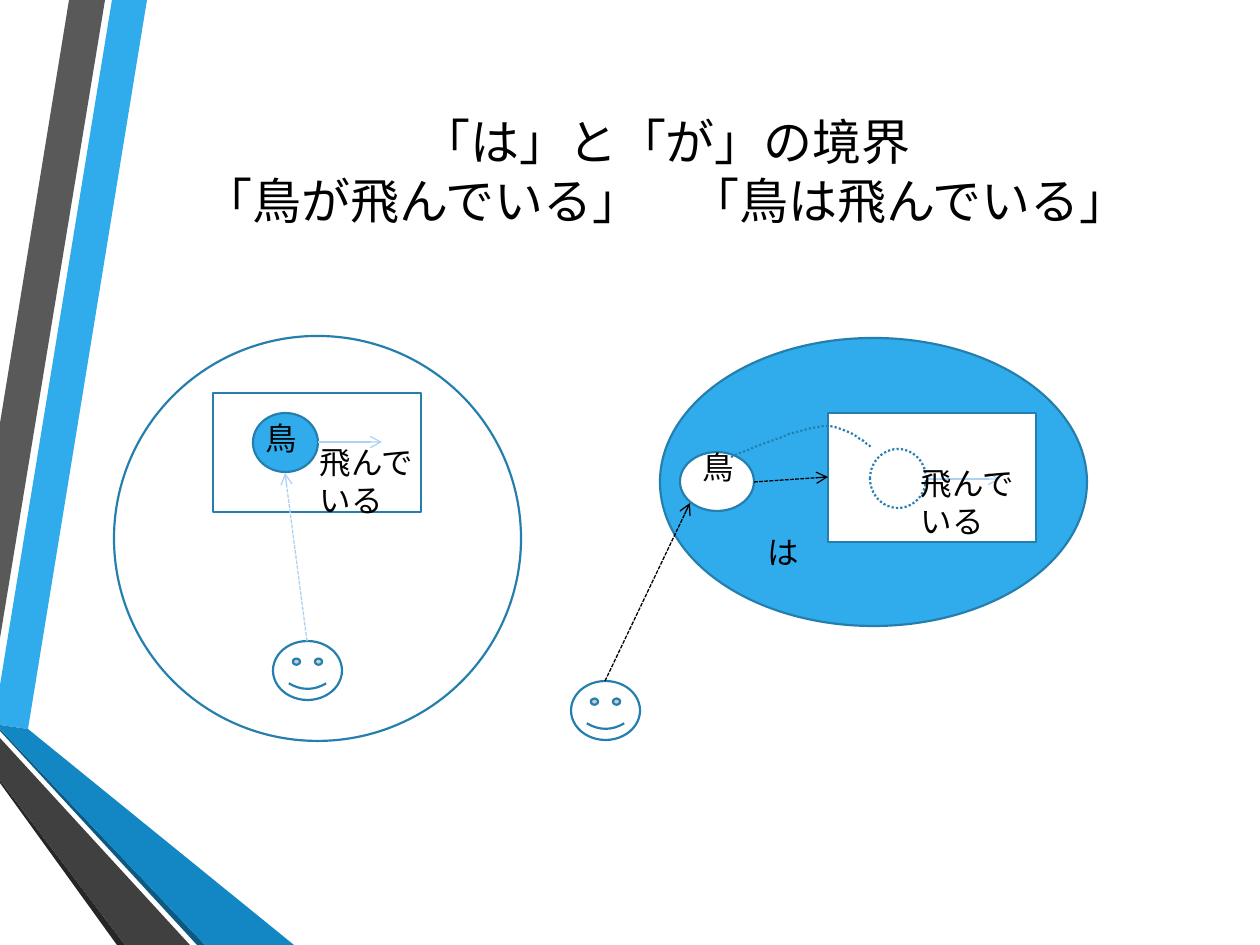
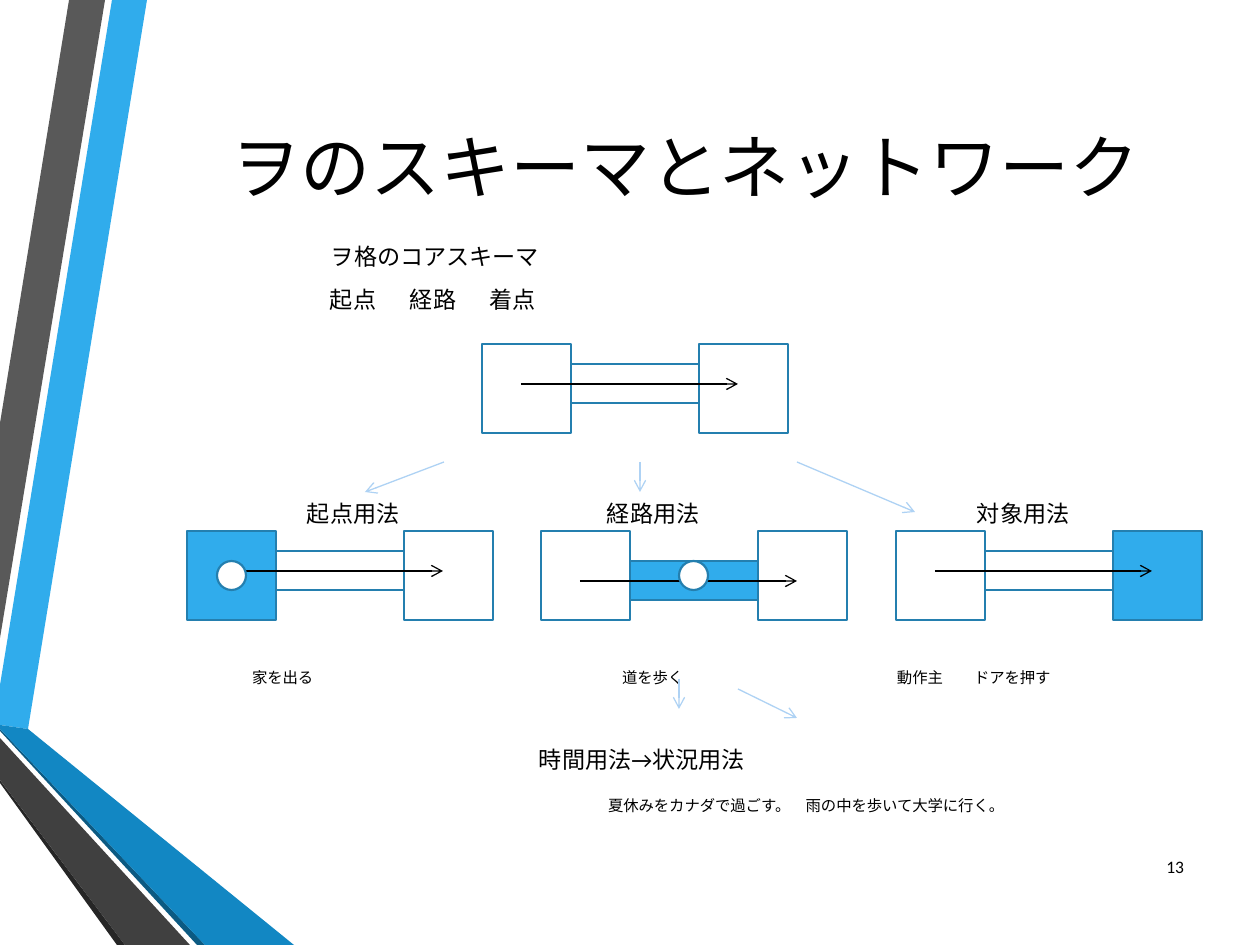
"""Build two slides on Japanese particles: the は/が boundary and the schema network of ヲ."""
import lxml.etree
import pptx
import pptx.dml.color
import pptx.enum.dml
import pptx.enum.shapes
import pptx.enum.text
import pptx.oxml.ns
import pptx.util

EMU_PER_PX = 914400 / 126
FONT = "Calibri"
COLORS = {
    "white": "FFFFFF", "black": "000000", "sky": "30ACEC", "outline": "247FAF",
    "pale": "AED2F4", "ocean": "1287C3", "deep": "0C5A82",
    "grey": "595959", "charcoal": "404040", "ink": "262626",
}
RIBBONS = [
    ("sky", [(0, 685), (0, 725), (28, 729), (147, 0), (112, 0)]),
    ("grey", [(105, 0), (69, 0), (0, 423), (0, 638)]),
    ("ink", [(0, 780), (0, 783), (117, 945), (125, 945)]),
    ("deep", [(0, 729), (0, 731), (197, 945), (205, 945)]),
    ("ocean", [(0, 729), (205, 945), (294, 945), (28, 729), (0, 725)]),
    ("charcoal", [(0, 780), (125, 945), (190, 945), (0, 738)]),
]
DASH = pptx.enum.dml.MSO_LINE.SQUARE_DOT
DOT = pptx.enum.dml.MSO_LINE.ROUND_DOT
SHAPE = pptx.enum.shapes.MSO_SHAPE
ALIGN = pptx.enum.text.PP_ALIGN
ANCHOR = pptx.enum.text.MSO_ANCHOR


def px(length):
    """Convert pixels to EMU."""
    return pptx.util.Emu(round(length * EMU_PER_PX))


def rgb(name):
    """Look up a palette colour."""
    return pptx.dml.color.RGBColor.from_string(COLORS[name])


def add_child(parent, tag, **attributes):
    """Append a DrawingML element."""
    return lxml.etree.SubElement(parent, pptx.oxml.ns.qn(tag), attributes)


def style(outline, color, width, dash=None):
    """Set the colour, width and dash of a line."""
    outline.color.rgb = rgb(color)
    outline.width = pptx.util.Pt(width)
    if dash is not None:
        outline.dash_style = dash


def paint(shape, fill=None, outline="outline", dash=None):
    """Set the fill and outline of a shape and drop its shadow."""
    shape.shadow.inherit = False
    if fill:
        shape.fill.solid()
        shape.fill.fore_color.rgb = rgb(fill)
    else:
        shape.fill.background()
    if outline:
        style(shape.line, outline, 1.25, dash)
    else:
        shape.line.fill.background()


def add_figure(slide, kind, box, fill="white", dash=None):
    """Add an outlined preset shape."""
    paint(slide.shapes.add_shape(kind, *map(px, box)), fill, dash=dash)


def add_outline(slide, points, closed=True, **look):
    """Add a freeform through the given points."""
    builder = slide.shapes.build_freeform(*points[0], scale=EMU_PER_PX)
    builder.add_line_segments(points[1:], close=closed)
    paint(builder.convert_to_shape(), **look)


def add_arrow(slide, start, end, color="black", dash=None):
    """Add a thin straight arrow."""
    arrow = slide.shapes.add_connector(
        pptx.enum.shapes.MSO_CONNECTOR.STRAIGHT, *map(px, start + end))
    style(arrow.line, color, 0.75, dash)
    add_child(arrow.line._get_or_add_ln(), "a:tailEnd", type="arrow")
    add_child(arrow._element.spPr, "a:effectLst")


def add_text(slide, words, box, size=18, align=ALIGN.LEFT, anchor=ANCHOR.TOP,
             inset=(13, 6, 13, 6), wrap=True):
    """Add a text box with one format throughout."""
    frame = slide.shapes.add_textbox(*map(px, box)).text_frame
    frame.word_wrap = wrap
    frame.vertical_anchor = anchor
    (frame.margin_left, frame.margin_top,
     frame.margin_right, frame.margin_bottom) = map(px, inset)
    paragraph = frame.paragraphs[0]
    paragraph.text = words
    paragraph.alignment = align
    for run in paragraph.runs:
        run.font.size = pptx.util.Pt(size)
        run.font.color.rgb = rgb("black")
        run.font.name = FONT
        add_child(run._r.get_or_add_rPr(), "a:ea", typeface=FONT)


def add_title(slide, words, box, size, inset=(13, 6, 13, 6)):
    """Add a centred slide title."""
    add_text(slide, words, box, size, ALIGN.CENTER, ANCHOR.MIDDLE, inset)


def add_label(slide, words, left, middle, size):
    """Add a one-line label centred on a height."""
    width = round(len(words) * size * 1.75) + 8
    add_text(slide, words, (left, middle - 20, width, 40), size,
             anchor=ANCHOR.MIDDLE, inset=(0, 0, 0, 0), wrap=False)


def bezier(start, first, second, end, steps=12):
    """Return the points of a cubic curve."""
    return [tuple(round((1 - t) ** 3 * a + 3 * t * (1 - t) ** 2 * b
                        + 3 * t ** 2 * (1 - t) * c + t ** 3 * d)
                  for a, b, c, d in zip(start, first, second, end))
            for t in (step / steps for step in range(steps + 1))]


def add_path_schema(slide, left, top, source="white", route=None, goal="white", drop=20):
    """Draw source, goal, the route between them and the motion arrow."""
    add_figure(slide, SHAPE.RECTANGLE, (left, top, 89, 89), source)
    add_figure(slide, SHAPE.RECTANGLE, (left + 217, top, 89, 89), goal)
    add_figure(slide, SHAPE.RECTANGLE, (left + 89, top + drop, 128, 39), route)
    height = top + drop + 20
    add_arrow(slide, (left + 39, height), (left + 256, height))


def new_slide(deck):
    """Add a blank slide with the ribbons on its left edge."""
    slide = deck.slides.add_slide(deck.slide_layouts[6])
    for color, points in RIBBONS:
        add_outline(slide, points, fill=color, outline=None)
    return slide


def build_boundary(deck):
    """Contrast the が scene with the は scene."""
    slide = new_slide(deck)
    add_title(slide, "「は」と「が」の境界\v「鳥が飛んでいる」　「鳥は飛んでいる」",
              (135, 63, 1062, 273), 28, (13, 6, 13, 65))

    add_figure(slide, SHAPE.OVAL, (114, 336, 407, 405))
    add_figure(slide, SHAPE.SMILEY_FACE, (273, 641, 69, 59))
    add_figure(slide, SHAPE.RECTANGLE, (213, 393, 208, 119))
    add_figure(slide, SHAPE.OVAL, (253, 413, 65, 59), "sky")
    add_arrow(slide, (318, 442), (382, 442), "pale")
    add_text(slide, "鳥", (253, 413, 64, 50))
    add_arrow(slide, (307, 641), (285, 473), "pale", DASH)
    add_text(slide, "飛んでいる", (307, 437, 124, 89))

    add_figure(slide, SHAPE.OVAL, (660, 338, 427, 288), "sky")
    add_figure(slide, SHAPE.RECTANGLE, (828, 413, 208, 129))
    add_figure(slide, SHAPE.OVAL, (870, 449, 56, 59), dash=DOT)
    add_figure(slide, SHAPE.OVAL, (680, 452, 74, 59))
    add_arrow(slide, (926, 479), (1000, 479), "pale")
    add_figure(slide, SHAPE.SMILEY_FACE, (571, 681, 69, 59))
    add_arrow(slide, (605, 681), (690, 503), dash=DASH)
    add_arrow(slide, (754, 482), (828, 477), dash=DASH)
    add_text(slide, "鳥", (690, 442, 63, 50))
    add_text(slide, "は", (754, 527, 54, 50))
    add_text(slide, "飛んでいる", (908, 458, 124, 89))
    rise = bezier((731, 457), (766, 442), (800, 428), (824, 426))
    fall = bezier((824, 426), (847, 425), (871, 447), (871, 447))
    add_outline(slide, rise + fall[1:], closed=False, dash=DOT)


def build_network(deck):
    """Show the core schema of ヲ and the uses derived from it."""
    slide = new_slide(deck)
    add_title(slide, "ヲのスキーマとネットワーク", (110, 95, 1150, 141), 40)
    labels = [
        (13.2, 256, [("ヲ格のコアスキーマ", 331)]),
        (13.2, 299, [("起点", 330), ("経路", 410), ("着点", 489)]),
        (13.2, 513, [("起点用法", 307), ("経路用法", 607), ("対象用法", 977)]),
        (8.8, 677, [("家を出る", 252), ("道を歩く", 622), ("動作主", 897), ("ドアを押す", 974)]),
        (13.2, 759, [("時間用法→状況用法", 539)]),
        (8.8, 805, [("夏休みをカナダで過ごす。　雨の中を歩いて大学に行く。", 608)]),
    ]
    for size, middle, row in labels:
        for words, left in row:
            add_label(slide, words, left, middle, size)
    add_text(slide, "13", (1138, 842, 59, 50), 10, ALIGN.RIGHT, ANCHOR.MIDDLE)

    add_path_schema(slide, 482, 344)
    add_path_schema(slide, 541, 531, route="sky", drop=30)
    add_path_schema(slide, 896, 531, goal="sky")
    add_path_schema(slide, 187, 531, source="sky")
    for mover_left in (217, 679):
        add_figure(slide, SHAPE.OVAL, (mover_left, 561, 29, 29))
    for start, end in [((444, 462), (365, 492)), ((640, 462), (640, 492)),
                       ((797, 462), (915, 512)), ((679, 679), (679, 709)),
                       ((738, 689), (797, 718))]:
        add_arrow(slide, start, end, "pale")


def main():
    """Build and save the deck."""
    deck = pptx.Presentation()
    deck.slide_width, deck.slide_height = px(1260), px(945)
    build_boundary(deck)
    build_network(deck)
    deck.save("out.pptx")


if __name__ == "__main__":
    main()
